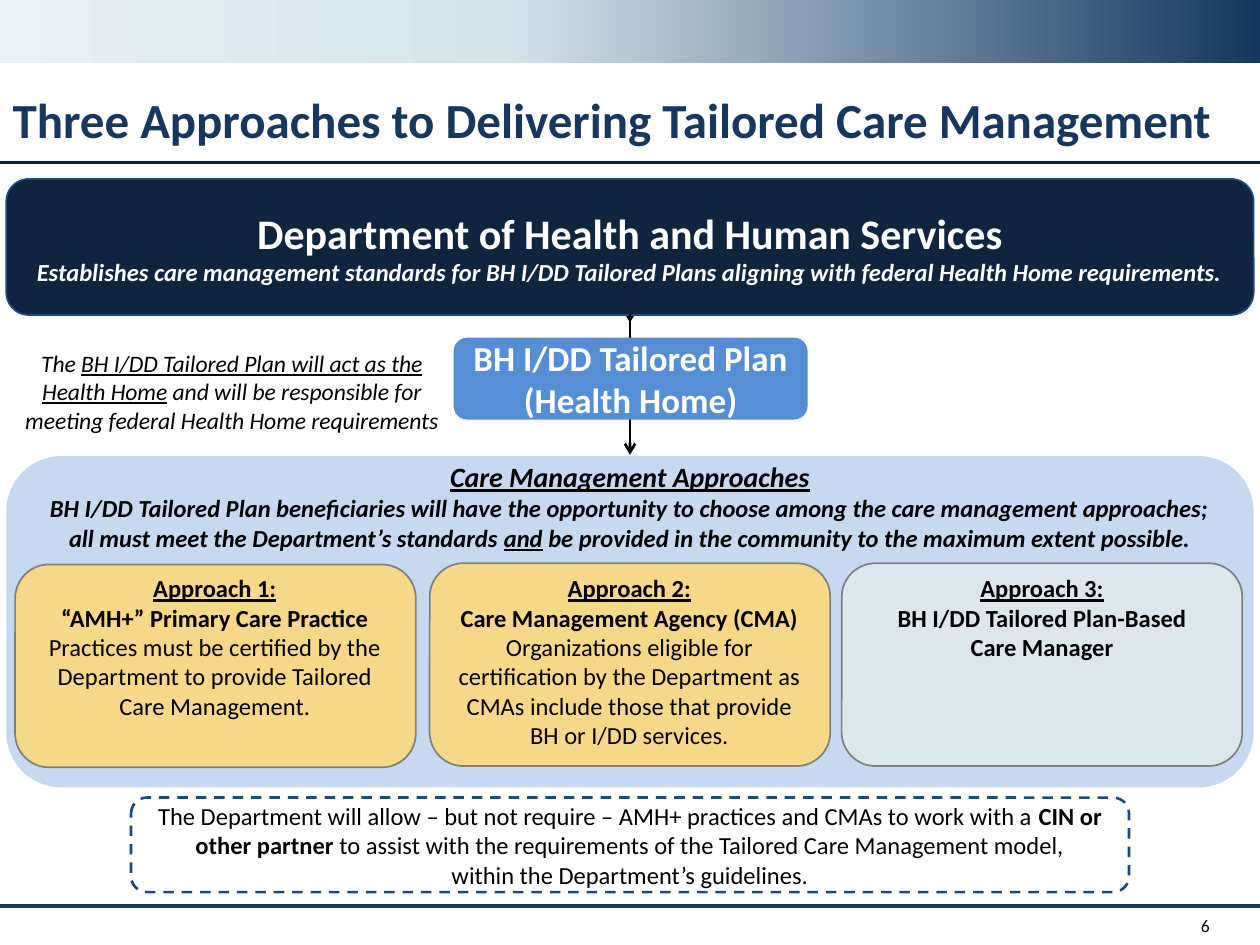
from copy import deepcopy
from dataclasses import dataclass

from lxml import etree
from pptx import Presentation
from pptx.dml.color import RGBColor
from pptx.enum import dml, shapes, text
from pptx.oxml import ns
from pptx.util import Inches, Pt


@dataclass(frozen=True)
class Theme:
    font: str = "Calibri"
    black: str = "000000"
    white: str = "FFFFFF"
    navy: str = "17375E"
    rule: str = "002060"
    deep: str = "0F243E"
    edge: str = "1F497D"
    plan: str = "558ED5"
    panel: str = "C6D9F1"
    gold: str = "F6D888"
    pale: str = "DBE7EC"
    gray: str = "808080"
    band: tuple = ((0, "17375E"), (0.6, "D3E4ED"), (1, "E9F1F6"))
    title: float = 28
    head: float = 24
    sub: float = 20
    lead: float = 16
    body: float = 14
    note: float = 13.5
    small: float = 10


class Deck:
    """Draws styled elements on the current slide."""

    def __init__(self, theme):
        self.theme = theme
        self.prs = Presentation()
        self.prs.slide_width, self.prs.slide_height = Inches(10), Inches(7.5)

    def start(self, title, box):
        self.slide = self.prs.slides.add_slide(self.prs.slide_layouts[5])
        head = self.slide.shapes.title
        head.left, head.top, head.width, head.height = map(Inches, box)
        self.letter(head.text_frame, [(self.theme.title, [(title, "b")])],
                    self.theme.navy, "LEFT", "MIDDLE")
        head.text_frame.paragraphs[0].line_spacing = 0.9

    def letter(self, frame, paras, color, align="CENTER", anchor="TOP"):
        frame.word_wrap = True
        frame.auto_size = text.MSO_AUTO_SIZE.NONE
        frame.vertical_anchor = text.MSO_ANCHOR[anchor]
        for num, (size, parts) in enumerate(paras):
            para = frame.add_paragraph() if num else frame.paragraphs[0]
            para.alignment = text.PP_ALIGN[align]
            for words, marks in parts:
                run = para.add_run()
                run.text = words
                font = run.font
                font.name, font.size = self.theme.font, Pt(size)
                font.color.rgb = RGBColor.from_string(color)
                font.bold, font.italic, font.underline = (m in marks for m in "biu")

    def label(self, box, paras, align="CENTER", anchor="TOP"):
        area = self.slide.shapes.add_textbox(*map(Inches, box))
        self.letter(area.text_frame, paras, self.theme.black, align, anchor)

    def block(self, box, fill=None, line=None, width=1, dash=False,
              paras=(), color=None, kind="ROUNDED_RECTANGLE"):
        form = self.slide.shapes.add_shape(shapes.MSO_SHAPE[kind], *map(Inches, box))
        form.shadow.inherit = False
        if fill:
            form.fill.solid()
            form.fill.fore_color.rgb = RGBColor.from_string(fill)
        else:
            form.fill.background()
        if line:
            form.line.color.rgb = RGBColor.from_string(line)
            form.line.width = Pt(width)
        else:
            form.line.fill.background()
        if dash:
            form.line.dash_style = dml.MSO_LINE.DASH
        if paras:
            self.letter(form.text_frame, paras, color, anchor="MIDDLE")
        return form

    def band(self, box, stops):
        form = self.block(box, kind="RECTANGLE")
        form.fill.gradient()
        form.fill.gradient_angle = 180
        grads = form._element.spPr.find(".//" + ns.qn("a:gsLst"))
        grads.append(deepcopy(grads[0]))
        for stop, (place, color) in zip(form.fill.gradient_stops, stops):
            stop.position = place
            stop.color.rgb = RGBColor.from_string(color)

    def line(self, start, end, color, width, arrow=False):
        rule = self.slide.shapes.add_connector(
            shapes.MSO_CONNECTOR.STRAIGHT, *map(Inches, start + end))
        rule.line.color.rgb = RGBColor.from_string(color)
        rule.line.width = Pt(width)
        props = rule._element.spPr
        if arrow:
            etree.SubElement(props.find(ns.qn("a:ln")), ns.qn("a:tailEnd"), type="arrow")
        etree.SubElement(props, ns.qn("a:effectLst"))

    def card(self, box, fill, area, num, name, words=None):
        size = self.theme.body
        paras = [(size, [(f"Approach {num}:", "bu")]), (size, [(name, "b")])]
        if words:
            paras.append((size, [(words, "")]))
        self.block(box, fill, self.theme.gray)
        self.label(area, paras)


def main():
    look = Theme()
    deck = Deck(look)
    deck.start("Three Approaches to Delivering Tailored Care Management",
               (0, 0.67, 10.25, 0.6))
    deck.band((0, 0, 10, 0.5), look.band)
    deck.line((0, 7.19), (10, 7.19), look.navy, 2.25)
    deck.line((0, 1.29), (10, 1.29), look.rule, 2)
    deck.label((9.08, 7.19, 0.62, 0.31), [(look.small, [("6", "")])], "RIGHT", "MIDDLE")

    deck.block((1.04, 6.33, 7.92, 0.75), line=look.edge, width=1.5, dash=True,
               color=look.black, paras=[
        (look.body, [
            ("The Department will allow – but not require – AMH+ practices and CMAs "
             "to work with a ", ""),
            ("CIN or other partner ", "b"),
            ("to assist with the requirements of the Tailored Care Management model,", "")]),
        (look.body, [("within the Department’s guidelines.", "")])])

    deck.line((5, 2.17), (5, 2.56), look.black, 1.5, True)
    deck.block((0.05, 1.42, 9.9, 1.08), look.deep, look.edge, color=look.white, paras=[
        (look.head, [("Department of Health and Human Services", "b")]),
        (look.body, [("Establishes care management standards for BH I/DD Tailored Plans "
                      "aligning with federal Health Home requirements.", "bi")])])

    deck.block((0.05, 3.62, 9.9, 2.63), look.panel)
    deck.label((0.18, 3.6, 9.64, 0.84), [
        (look.lead, [("Care Management Approaches", "biu")]),
        (look.body, [("BH I/DD Tailored Plan beneficiaries will have the opportunity to "
                      "choose among the care management approaches;", "bi")]),
        (look.body, [
            ("all must meet the Department’s standards ", "bi"), ("and", "biu"),
            (" be provided in the community to the maximum extent possible.", "bi")])])

    deck.card((0.12, 4.48, 3.18, 1.61), look.gold, (0.24, 4.5, 2.93, 1.51), 1,
              "“AMH+” Primary Care Practice",
              "Practices must be certified by the Department to provide Tailored "
              "Care Management.")
    deck.card((3.41, 4.47, 3.18, 1.61), look.gold, (3.49, 4.5, 3.01, 1.51), 2,
              "Care Management Agency (CMA)",
              "Organizations eligible for certification by the Department as CMAs "
              "include those that provide BH or I/DD services.")
    deck.card((6.68, 4.47, 3.18, 1.61), look.pale, (6.93, 4.5, 2.68, 1.04), 3,
              "BH I/DD Tailored Plan-Based Care Manager")

    deck.line((5, 2.49), (5, 3.61), look.black, 1.5, True)
    deck.label((0.08, 2.72, 3.52, 0.78), [(look.note, [
        ("The ", "i"), ("BH I/DD Tailored Plan will act as the Health Home", "iu"),
        (" and will be responsible for meeting federal Health Home requirements", "i")])])
    deck.block((3.6, 2.68, 2.81, 0.65), look.plan, color=look.white, paras=[
        (look.sub, [("BH I/DD Tailored Plan", "b")]),
        (look.sub, [("(Health Home)", "b")])])
    deck.prs.save("out.pptx")


if __name__ == "__main__":
    main()
